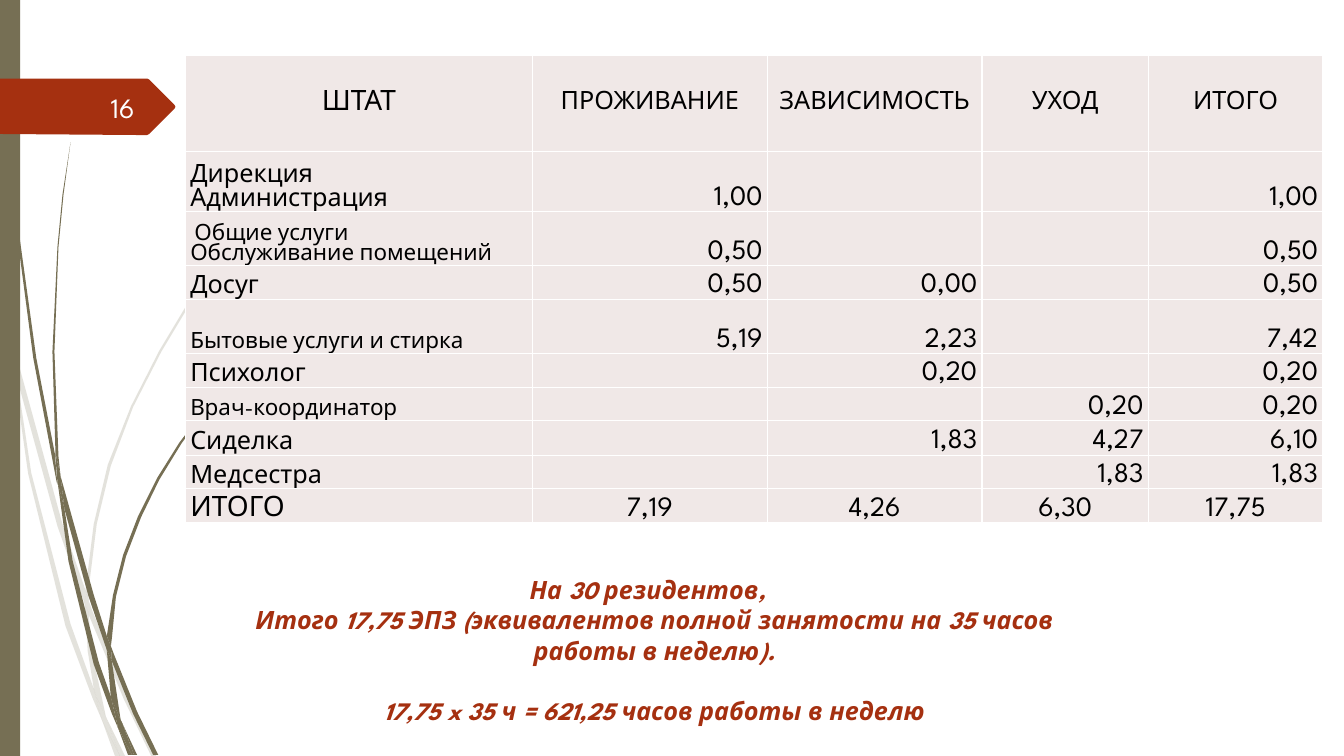
from lxml import etree
from pptx import Presentation, util as u
from pptx.dml.color import RGBColor
from pptx.enum import shapes, text
from pptx.oxml import parse_xml
from pptx.oxml.ns import nsdecls, qn

FONT = "League Spartan"
COLORS = {"olive": "766F54", "rust": "A53010", "cell": "F0E8E7",
          "rule": "FFFFFF", "ink": "000000", "number": "FEFFFF"}
SIDES = ("lnL", "lnR", "lnT", "lnB")
ALIGN = text.PP_ALIGN
ANCHOR = text.MSO_ANCHOR

# Staff table: widths and heights in inches
COLUMNS = (3.44, 2.33, 2.13, 1.65, 1.73)
ROWS = (0.95, 0.6, 0.53, 0.33, 0.54, 0.33, 0.33, 0.34, 0.33, 0.33)
STAFF = (
    ("ШТАТ", "ПРОЖИВАНИЕ", "ЗАВИСИМОСТЬ", "УХОД", "ИТОГО"),
    ("Дирекция\nАдминистрация", "1,00", "", "", "1,00"),
    (" Общие услуги\nОбслуживание помещений", "0,50", "", "", "0,50"),
    ("Досуг", "0,50", "0,00", "", "0,50"),
    ("Бытовые услуги и стирка", "5,19", "2,23", "", "7,42"),
    ("Психолог", "", "0,20", "", "0,20"),
    ("Врач-координатор", "", "", "0,20", "0,20"),
    ("Сиделка", "", "1,83", "4,27", "6,10"),
    ("Медсестра", "", "", "1,83", "1,83"),
    ("ИТОГО", "7,19", "4,26", "6,30", "17,75"),
)
SMALL_ROWS = (2, 4, 6)
LAST_ROW = len(STAFF) - 1

SUMMARY = (
    "На 30 резидентов, \u00a0",
    "Итого 17,75 ЭПЗ (эквивалентов полной занятости на 35 часов работы в неделю).",
    "17,75 x 35 ч = 621,25 часов работы в неделю",
)

# Grass: corner points of each blade section
PALE_GRASS = (
    ((0.11, 3.5), (0.08, 3.22), (0, 2.82), (0, 2.99), (0.1, 3.44)),
    ((0.57, 5.22), (0.84, 5.99), (0.85, 5.86), (0.62, 5.2), (0.14, 3.45), (0.17, 3.76)),
    ((0.92, 6.07), (0.88, 5.96), (0.88, 6.1), (1.23, 6.94), (1.5, 7.5), (1.55, 7.5),
     (1.27, 6.92)),
    ((1.19, 7.5), (1.24, 7.5), (1.05, 7.11)),
    ((0.93, 6.83), (0.7, 6.19), (0.31, 4.69), (0.17, 3.76), (0.11, 3.5), (0.28, 4.7),
     (0.65, 6.21), (0.92, 6.93), (1.01, 7.14), (0.99, 7.07)),
    ((0.84, 5.99), (0.87, 6.46), (0.93, 6.83), (0.96, 6.92), (1.05, 7.11), (1.04, 7.06),
     (0.91, 6.46), (0.88, 6.1), (0.88, 6.08)),
    ((0.88, 5.84), (0.96, 5.2), (1.1, 4.62), (1.32, 4.04), (1.6, 3.49), (1.93, 2.94),
     (2.29, 2.45), (2.68, 1.98), (2.9, 1.75), (3.12, 1.53), (2.89, 1.75), (2.68, 1.97),
     (2.28, 2.44), (1.91, 2.93), (1.58, 3.48), (1.3, 4.03), (1.07, 4.61), (0.93, 5.2),
     (0.85, 5.84), (0.85, 5.86), (0.88, 5.96)),
    ((1.01, 7.14), (1.14, 7.5), (1.19, 7.5)),
    ((0.88, 6.08), (0.88, 6.1), (0.88, 5.96), (0.85, 5.86), (0.84, 5.99)),
    ((0.96, 6.92), (0.93, 6.83), (0.99, 7.07), (1.01, 7.14), (1.19, 7.5), (1.05, 7.11)),
)
DARK_GRASS = (
    ((0.07, 1.1), (0.17, 2.33), (0.33, 3.55), (0.56, 4.77), (0.57, 4.81), (0.55, 4.57),
     (0.55, 4.53), (0.36, 3.55), (0.19, 2.32), (0.08, 1.09), (0.05, 0.48), (0.03, 0),
     (0.03, 0.48)),
    ((0.88, 5.92), (1.06, 6.45), (1.06, 6.33), (1.06, 6.31), (0.93, 5.9), (0.6, 4.72),
     (0.64, 5.05)),
    ((1.13, 6.49), (1.1, 6.41), (1.11, 6.56), (1.32, 7.08), (1.52, 7.49), (1.57, 7.49),
     (1.36, 7.06)),
    ((1.1, 6.91), (0.98, 6.57), (0.72, 5.56), (0.64, 5.05), (0.57, 4.77), (0.68, 5.57),
     (0.93, 6.59), (1.11, 7.08), (1.17, 7.22), (1.16, 7.17)),
    ((0.6, 4.72), (0.58, 4.53), (0.54, 3.49), (0.58, 2.45), (0.63, 1.93), (0.7, 1.41),
     (0.62, 1.93), (0.57, 2.45), (0.52, 3.49), (0.55, 4.49)),
    ((1.33, 7.49), (1.36, 7.49), (1.22, 7.19)),
    ((0.57, 4.78), (0.64, 5.05), (0.6, 4.72), (0.55, 4.49), (0.55, 4.53)),
    ((1.11, 6.33), (1.15, 5.92), (1.25, 5.52), (1.4, 5.13), (1.58, 4.76), (1.8, 4.4),
     (2.05, 4.06), (2.31, 3.74), (2.61, 3.44), (2.31, 3.73), (2.04, 4.05), (1.78, 4.39),
     (1.56, 4.74), (1.37, 5.12), (1.22, 5.51), (1.12, 5.91), (1.06, 6.31), (1.1, 6.41)),
    ((1.17, 7.22), (1.27, 7.49), (1.31, 7.49)),
    ((1.06, 6.45), (1.1, 6.92), (1.16, 7.06), (1.22, 7.19), (1.2, 7.16), (1.11, 6.56),
     (1.09, 6.51)),
    ((1.06, 6.45), (1.09, 6.51), (1.11, 6.56), (1.1, 6.41), (1.06, 6.31), (1.06, 6.33)),
    ((1.16, 7.06), (1.1, 6.91), (1.16, 7.17), (1.17, 7.22), (1.31, 7.49), (1.33, 7.49),
     (1.22, 7.19)),
)
FLAG = ((0, 0), (1.46, 0), (1.48, 0.01), (1.73, 0.26), (1.74, 0.28), (1.73, 0.3),
        (1.48, 0.55), (1.46, 0.56), (1.36, 0.56), (0, 0.55))


def rgb(name):
    return RGBColor.from_string(COLORS[name])


def emu(box):
    return [u.Inches(length) for length in box]


def paint(shape, color, alpha=None):
    shape.shadow.inherit = False
    shape.fill.solid()
    shape.fill.fore_color.rgb = rgb(color)
    shape.line.fill.background()
    if alpha:
        tint = shape.fill._xPr.find(".//" + qn("a:srgbClr"))
        etree.SubElement(tint, qn("a:alpha")).set("val", str(alpha * 1000))


def write(paragraph, words, align, color, **formats):
    paragraph.alignment = align
    run = paragraph.add_run()
    run.text = words
    run.font.color.rgb = rgb(color)
    for name, value in {"name": FONT, **formats}.items():
        setattr(run.font, name, value)


def draw_outline(slide, box, corners, color, alpha=None):
    left, top = box[:2]
    start, *rest = [emu((left + x, top + y)) for x, y in corners]
    builder = slide.shapes.build_freeform(*start, scale=1.0)
    builder.add_line_segments(rest, close=True)
    paint(builder.convert_to_shape(), color, alpha)


def draw_grass(slide, box, sections, alpha=None):
    for section in sections:
        draw_outline(slide, box, section, "olive", alpha)


def draw_page_flag(slide, box, number):
    left, top, width, height = box
    draw_outline(slide, box, FLAG, "rust")
    label = slide.shapes.add_textbox(
        *emu((left + width / 3, top + 0.08, width * 0.49, height - 0.16)))
    frame = label.text_frame
    frame.word_wrap = True
    frame.vertical_anchor = ANCHOR.MIDDLE
    write(frame.paragraphs[0], number, ALIGN.RIGHT, "number", size=u.Pt(20))


def draw_summary(slide, box):
    frame = slide.shapes.add_textbox(*emu(box)).text_frame
    frame.word_wrap = True
    for index, sentence in enumerate(SUMMARY):
        paragraph = frame.add_paragraph() if index else frame.paragraphs[0]
        paragraph.line_spacing = u.Pt(21.6)
        write(paragraph, sentence, ALIGN.CENTER, "rust",
              size=u.Pt(18), bold=True, italic=True)
    paragraph.space_before = u.Pt(21.6)


def cell_format(row, column):
    """Size and alignment that follow from the place in the table."""
    if row == 0:
        return (18 if column else 20), ALIGN.CENTER
    if column:
        return 20, ALIGN.CENTER if row == LAST_ROW else ALIGN.RIGHT
    return (20 if row == LAST_ROW else 16 if row in SMALL_ROWS else 18), ALIGN.LEFT


def fill_cell(cell, words, row, column):
    margins = {"margin_left": 3.4, "margin_right": 3.4, "margin_top": 0, "margin_bottom": 0}
    for name, value in margins.items():
        setattr(cell, name, u.Pt(value))
    cell.vertical_anchor = ANCHOR.BOTTOM if row else ANCHOR.MIDDLE
    for side in SIDES:
        cell._tc.get_or_add_tcPr().append(parse_xml(
            f'<a:{side} {nsdecls("a")} w="12700"><a:solidFill>'
            f'<a:srgbClr val="{COLORS["rule"]}"/></a:solidFill></a:{side}>'))
    cell.fill.solid()
    cell.fill.fore_color.rgb = rgb("cell")
    frame = cell.text_frame
    if not words:  # keeps the empty line from stretching its row
        frame.paragraphs[0]._p.append(parse_xml(
            f'<a:endParaRPr {nsdecls("a")} sz="1600"><a:latin typeface="{FONT}"/>'
            '</a:endParaRPr>'))
        return
    size, align = cell_format(row, column)
    for index, line in enumerate(words.split("\n")):
        paragraph = frame.add_paragraph() if index else frame.paragraphs[0]
        if line.startswith(" "):
            write(paragraph, " ", align, "ink", size=u.Pt(12))
        write(paragraph, line.strip(), align, "ink", size=u.Pt(size))


def draw_staff_table(slide, left, top):
    table = slide.shapes.add_table(
        len(ROWS), len(COLUMNS), *emu((left, top, sum(COLUMNS), sum(ROWS)))).table
    table.first_row = table.horz_banding = False
    for column, width in zip(table.columns, COLUMNS):
        column.width = u.Inches(width)
    for row, height in zip(table.rows, ROWS):
        row.height = u.Inches(height)
    for row, entries in enumerate(STAFF):
        for column, words in enumerate(entries):
            fill_cell(table.cell(row, column), words, row, column)


def main():
    deck = Presentation()
    deck.slide_width, deck.slide_height = emu((13.33, 7.5))
    slide = deck.slides.add_slide(deck.slide_layouts[6])
    # Side decoration
    side = (0, 0, 3.12, 7.5)
    draw_grass(slide, side, PALE_GRASS, alpha=20)
    draw_grass(slide, side, DARK_GRASS)
    bar = slide.shapes.add_shape(shapes.MSO_SHAPE.RECTANGLE, *emu((0, 0, 0.2, 7.5)))
    paint(bar, "olive")
    # Content
    draw_page_flag(slide, (0, 0.78, 1.74, 0.56), "16")
    draw_summary(slide, (2.15, 5.65, 8.68, 1.6))
    draw_staff_table(slide, 1.84, 0.55)
    deck.save("out.pptx")


if __name__ == "__main__":
    main()
